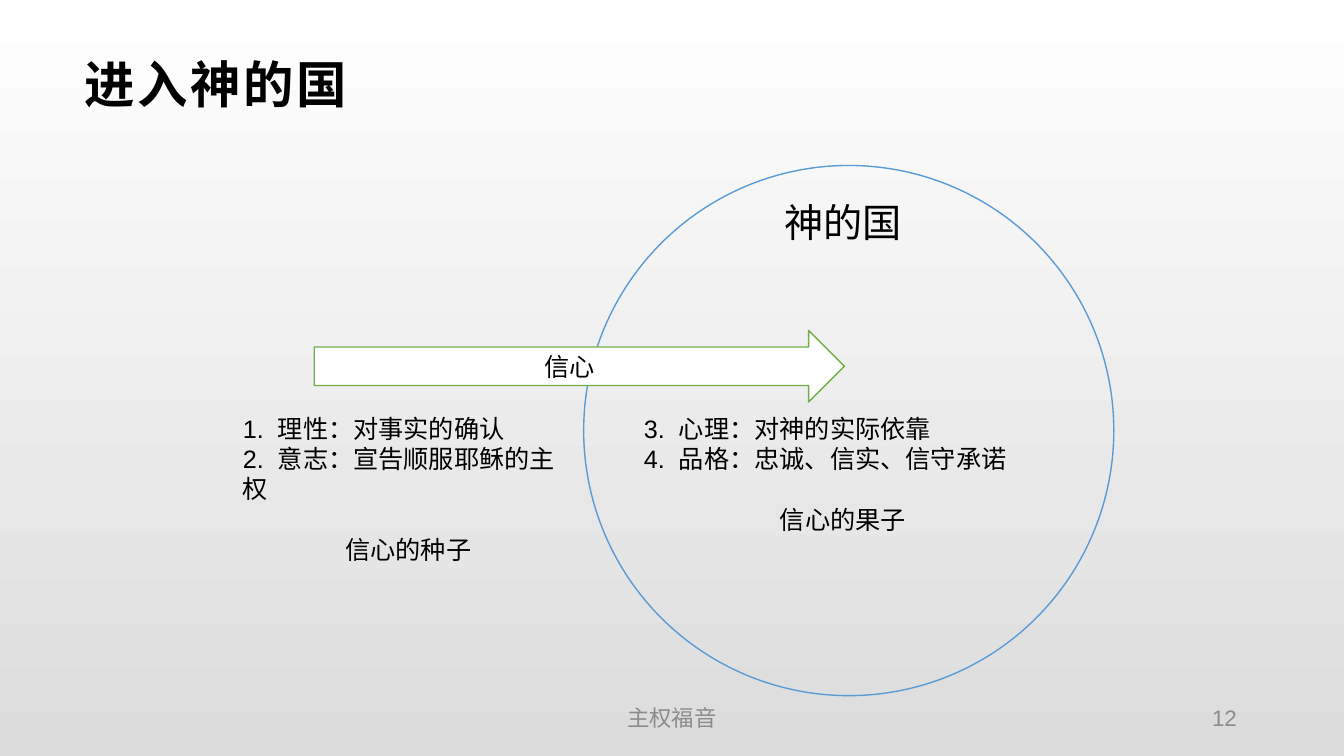
from pptx import Presentation
from pptx.dml.color import RGBColor
from pptx.enum.shapes import MSO_SHAPE as Preset
from pptx.enum.text import MSO_ANCHOR as Anchor, PP_ALIGN as Align
from pptx.util import Cm, Pt


def color(hex_value):
    return RGBColor.from_string(hex_value)


class SlideBuilder:
    """Holds the text style and the current slide, and adds its elements."""

    font_name = "Arial"
    text_color = "000000"
    muted_color = "8C8C8C"
    body_size = 18
    line_pitch = 21.7

    def __init__(self, presentation):
        self.slide = presentation.slides.add_slide(presentation.slide_layouts[6])

    def background(self, top, bottom):
        fill = self.slide.background.fill
        fill.gradient()
        fill.gradient_angle = 270
        for stop, position, value in zip(fill.gradient_stops, (0, 1), (top, bottom)):
            stop.position = position
            stop.color.rgb = color(value)

    def style(self, paragraph, size=body_size, value=text_color, align=Align.LEFT, bold=False):
        paragraph.alignment = align
        paragraph.font.name = self.font_name
        paragraph.font.size = Pt(size)
        paragraph.font.bold = bold
        paragraph.font.color.rgb = color(value)

    def track(self, run, points):
        run.font._element.set("spc", str(points * 100))

    def text_box(self, left, top, width, height, anchor=Anchor.TOP):
        box = self.slide.shapes.add_textbox(Cm(left), Cm(top), Cm(width), Cm(height))
        frame = box.text_frame
        frame.word_wrap = True
        frame.vertical_anchor = anchor
        return frame

    def label(self, text, left, top, width, height, anchor=Anchor.MIDDLE, **style):
        paragraph = self.text_box(left, top, width, height, anchor).paragraphs[0]
        paragraph.text = text
        self.style(paragraph, **style)
        return paragraph

    def numbered_list(self, items, caption, left, top, width, height):
        frame = self.text_box(left, top, width, height)
        for index, item in enumerate(items):
            paragraph = frame.add_paragraph() if index else frame.paragraphs[0]
            for part in item.partition(" "):
                run = paragraph.add_run()
                run.text = part
                if part == " ":
                    self.track(run, 5)
            self.style(paragraph)
        paragraph = frame.add_paragraph()
        paragraph.text = caption
        paragraph.space_before = Pt(self.line_pitch)
        self.style(paragraph, align=Align.CENTER)

    def outline_shape(self, preset, left, top, width, height, line, fill=None):
        shape = self.slide.shapes.add_shape(preset, Cm(left), Cm(top), Cm(width), Cm(height))
        shape.shadow.inherit = False
        shape.line.color.rgb = color(line)
        shape.line.width = Pt(1)
        if fill:
            shape.fill.solid()
            shape.fill.fore_color.rgb = color(fill)
        else:
            shape.fill.background()
        return shape

    def arrow(self, text, left, top, width, height, line, fill):
        shape = self.outline_shape(Preset.RIGHT_ARROW, left, top, width, height, line, fill)
        shape.adjustments[0] = 0.54
        shape.adjustments[1] = 0.5
        shape.text_frame.vertical_anchor = Anchor.MIDDLE
        paragraph = shape.text_frame.paragraphs[0]
        paragraph.text = text
        self.style(paragraph, align=Align.CENTER)


def main():
    presentation = Presentation()
    presentation.slide_width = Cm(33.87)
    presentation.slide_height = Cm(19.05)

    builder = SlideBuilder(presentation)
    builder.background("FFFFFF", "DCDCDC")

    title = builder.label("进入神的国", 1.87, 1.19, 30.15, 1.8, size=36, bold=True)
    builder.track(title.runs[0], 2)

    footer = {"size": 16, "value": builder.muted_color}
    builder.label("主权福音", 11.43, 17.63, 11, 0.89, align=Align.CENTER, **footer)
    builder.label("12", 23.93, 17.63, 7.49, 0.89, align=Align.RIGHT, **footer)

    builder.outline_shape(Preset.OVAL, 14.71, 4.17, 13.36, 13.36, "5B9BD5")
    builder.numbered_list(
        ["1. 理性：对事实的确认", "2. 意志：宣告顺服耶稣的主权"],
        "信心的种子", 5.87, 10.29, 8.84, 3.33)
    builder.numbered_list(
        ["3. 心理：对神的实际依靠", "4. 品格：忠诚、信实、信守承诺"],
        "信心的果子", 15.98, 10.29, 10.52, 3.33)
    builder.arrow("信心", 7.92, 8.33, 13.36, 1.8, "70AD47", "FFFFFF")
    builder.label("神的国", 19.51, 4.88, 5.08, 1.44, Anchor.TOP, size=28)

    presentation.save("out.pptx")


if __name__ == "__main__":
    main()
